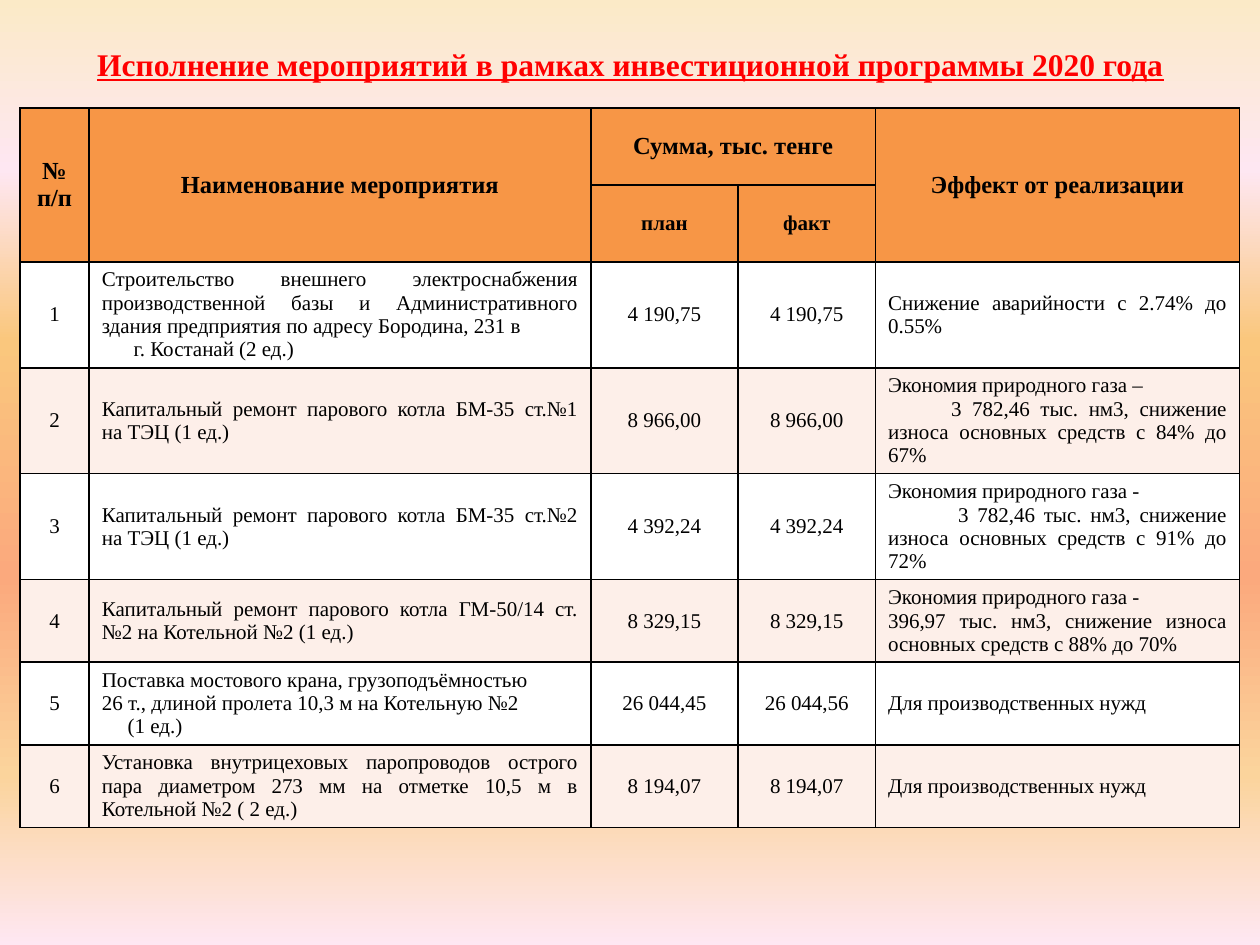
from dataclasses import dataclass

from lxml.etree import SubElement
from pptx import Presentation
from pptx.dml.color import RGBColor
from pptx.enum.text import MSO_ANCHOR, MSO_AUTO_SIZE, PP_ALIGN
from pptx.oxml import parse_xml
from pptx.oxml.ns import nsdecls, qn
from pptx.util import Cm, Pt


@dataclass(frozen=True)
class Theme:
    font: str = "Times New Roman"
    title: str = "FF0000"
    text: str = "000000"
    border: str = "000000"
    header: str = "F79646"
    bands: tuple = ("FFFFFF", "FDEFE9")
    background: tuple = ((0, "FBEAC7"), (18, "FEE7F2"), (36, "FAC77D"),
                         (61, "FBA97D"), (82, "FBD49C"), (100, "FEE7F2"))
    title_size: int = 18
    header_size: int = 14
    body_size: int = 12


theme = Theme()


def write(tf, text, size=theme.body_size, color=theme.text, bold=False,
          underline=False, align=PP_ALIGN.CENTER):
    """Fill a text frame; text is a string or a list of (line, first-line indent in cm)."""
    lines = [(text, 0)] if isinstance(text, str) else text
    for i, (line, indent) in enumerate(lines):
        p = tf.paragraphs[0] if i == 0 else tf.add_paragraph()
        p.alignment = align
        if indent:
            p._p.get_or_add_pPr().set("indent", str(Cm(indent)))
        r = p.add_run()
        r.text = line
        r.font.name = theme.font
        r.font.size = Pt(size)
        r.font.bold = bold
        r.font.underline = underline
        r.font.color.rgb = RGBColor.from_string(color)


def style_cell(cell, color, narrow=False):
    """Set fill, thin borders, anchor and, for narrow cells, tighter margins."""
    cell.fill.solid()
    cell.fill.fore_color.rgb = RGBColor.from_string(color)
    cell.vertical_anchor = MSO_ANCHOR.MIDDLE
    if narrow:
        cell.margin_left = cell.margin_right = Cm(0.18)
        cell.margin_top = cell.margin_bottom = 0
    tcPr = cell._tc.get_or_add_tcPr()
    for i, side in enumerate("LRTB"):
        tcPr.insert(i, parse_xml(
            f'<a:ln{side} {nsdecls("a")} w="{Pt(1)}"><a:solidFill>'
            f'<a:srgbClr val="{theme.border}"/></a:solidFill></a:ln{side}>'))


prs = Presentation()
prs.slide_width, prs.slide_height = Cm(25.4), Cm(19.05)
s = prs.slides.add_slide(prs.slide_layouts[0])
subtitle = s.placeholders[1]._element
subtitle.getparent().remove(subtitle)

# Background gradient, top to bottom
fill = s.background.fill
fill.gradient()
fill.gradient_angle = 270
stops = s._element.find(".//" + qn("a:gsLst"))
for stop in list(stops):
    stops.remove(stop)
for position, color in theme.background:
    stop = SubElement(stops, qn("a:gs"), pos=str(position * 1000))
    SubElement(stop, qn("a:srgbClr"), val=color)

# Title
title = s.shapes.title
title.left, title.top, title.width, title.height = Cm(0.8), Cm(0.4), Cm(23.82), Cm(1.78)
tf = title.text_frame
tf.word_wrap = True
tf.auto_size = MSO_AUTO_SIZE.NONE
tf.vertical_anchor = MSO_ANCHOR.MIDDLE
write(tf, "Исполнение мероприятий в рамках инвестиционной программы 2020 года",
      size=theme.title_size, color=theme.title, bold=True, underline=True)

# Table content: name, plan, actual, effect
measures = [
    ([("Строительство внешнего электроснабжения производственной базы и "
       "Административного здания предприятия по адресу Бородина, 231 в", 0),
      ("г. Костанай (2 ед.)", 0.64)],
     "4 190,75", "4 190,75", "Снижение аварийности с 2.74% до 0.55%"),
    ("Капитальный ремонт парового котла БМ-35 ст.№1 на ТЭЦ (1 ед.)",
     "8 966,00", "8 966,00",
     [("Экономия природного газа –", 0),
      ("3 782,46 тыс. нм3, снижение износа основных средств с 84% до 67%", 1.27)]),
    ("Капитальный ремонт парового котла БМ-35 ст.№2 на ТЭЦ (1 ед.)",
     "4 392,24", "4 392,24",
     [("Экономия природного газа -", 0),
      ("3 782,46 тыс. нм3, снижение износа основных средств с 91% до 72%", 1.41)]),
    ("Капитальный ремонт парового котла ГМ-50/14 ст.№2 на Котельной №2 (1 ед.)",
     "8 329,15", "8 329,15",
     [("Экономия природного газа -", 0),
      ("396,97 тыс. нм3, снижение износа основных средств с 88% до 70%", 0)]),
    ([("Поставка мостового крана, грузоподъёмностью", 0),
      ("26 т., длиной пролета 10,3 м на Котельную №2", 0),
      ("(1 ед.)", 0.52)],
     "26 044,45", "26 044,56", "Для производственных нужд"),
    ("Установка внутрицеховых паропроводов острого пара диаметром 273 мм "
     "на отметке 10,5 м в Котельной №2 ( 2 ед.)",
     "8 194,07", "8 194,07", "Для производственных нужд"),
]
headers = [  # row, column, last row, last column, text
    (0, 0, 1, 0, "№ п/п"),
    (0, 1, 1, 1, "Наименование мероприятия"),
    (0, 2, 0, 3, "Сумма, тыс. тенге"),
    (0, 4, 1, 4, "Эффект от реализации"),
]
column_widths = [1.4, 10.11, 2.97, 2.77, 7.34]
header_rows = 2
amount_columns = (2, 3)

frame = s.shapes.add_table(header_rows + len(measures), len(column_widths),
                           Cm(0.4), Cm(2.18), Cm(24.6), Cm(14.3))
table = frame.table
table.first_row = table.horz_banding = False
for column, width in zip(table.columns, column_widths):
    column.width = Cm(width)
for row in table.rows:
    row.height = Cm(1.55)
frame.height = Cm(14.3)

for row in range(header_rows):
    for col in range(len(column_widths)):
        style_cell(table.cell(row, col), theme.header,
                   narrow=row == 1 and col in amount_columns)
for row, col, last_row, last_col, text in headers:
    cell = table.cell(row, col)
    cell.merge(table.cell(last_row, last_col))
    write(cell.text_frame, text, size=theme.header_size, bold=True)
for col, text in zip(amount_columns, ("план", "факт")):
    write(table.cell(1, col).text_frame, text, bold=True)

for number, measure in enumerate(measures, 1):
    color = theme.bands[(number - 1) % 2]
    for col, text in enumerate((str(number), *measure)):
        cell = table.cell(header_rows + number - 1, col)
        style_cell(cell, color, narrow=col in amount_columns)
        align = PP_ALIGN.JUSTIFY if col in (1, 4) else PP_ALIGN.CENTER
        write(cell.text_frame, text, align=align)

prs.save("out.pptx")
